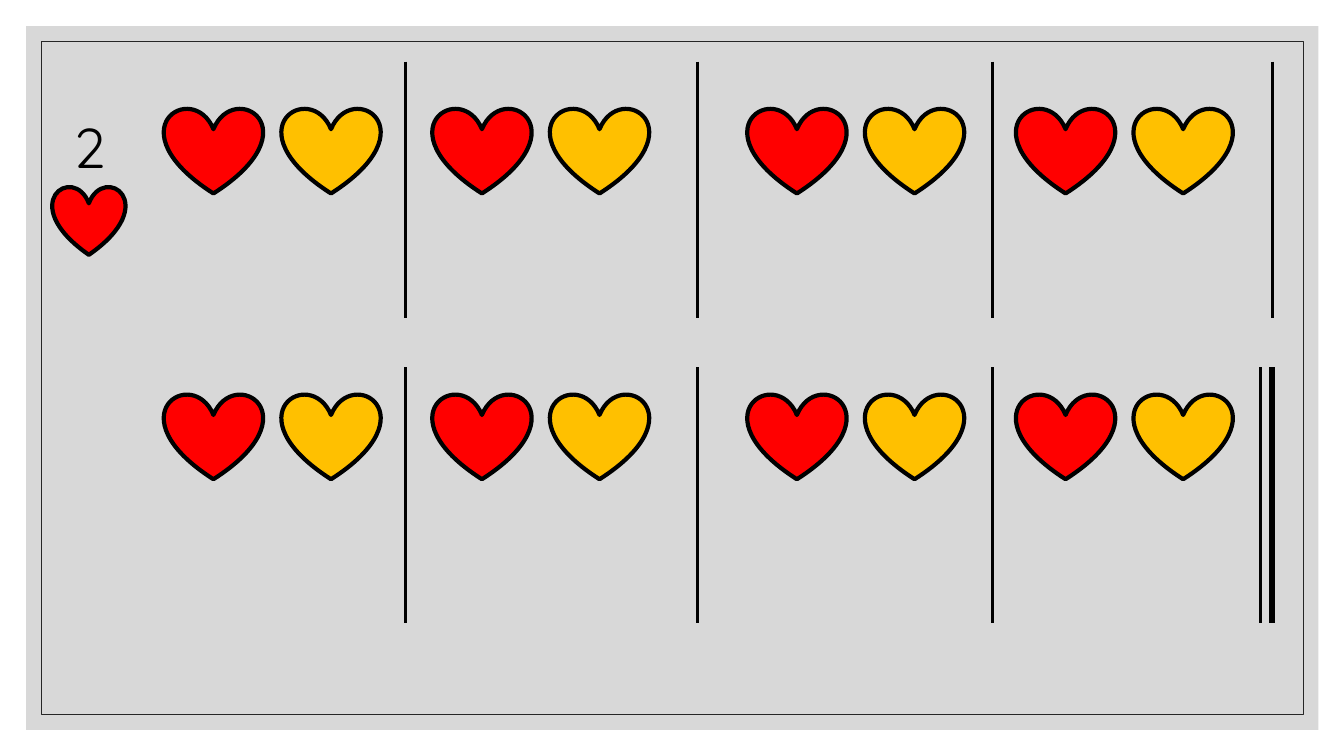
from lxml.etree import SubElement
from pptx import Presentation
from pptx.dml.color import RGBColor
from pptx.enum.shapes import MSO_CONNECTOR, MSO_SHAPE
from pptx.enum.text import PP_ALIGN
from pptx.oxml.ns import qn
from pptx.util import Pt

COLORS = {"panel": "BFBFBF", "frame": "262626", "red": "FF0000",
          "gold": "FFC000", "black": "000000"}
BEATS = "2"
PAIR_LEFTS = [117.2, 309, 534, 725.9]
PAIR_COLORS = ["red", "gold"]
HEART_STEP = 84
HEART_SIZE = (70.5, 61.2)
BAR_HEIGHT = 183
INNER_BARS = [(289.5, 2.25), (498.2, 2.25), (709.2, 2.25)]
ROWS = [
    {"hearts": 77, "bars": 44, "end_bars": [(908.7, 2.25)]},
    {"hearts": 281.1, "bars": 262.2, "end_bars": [(900.6, 2.25), (908.7, 4.5)]},
]


def rgb(name):
    return RGBColor.from_string(COLORS[name])


def add_preset(kind, x, y, w, h, fill=None, line=None, weight=0):
    sp = s.shapes.add_shape(kind, Pt(x), Pt(y), Pt(w), Pt(h))
    sp.shadow.inherit = False
    if fill:
        sp.fill.solid()
        sp.fill.fore_color.rgb = rgb(fill)
    else:
        sp.fill.background()
    if line:
        sp.line.color.rgb = rgb(line)
        sp.line.width = Pt(weight)
    else:
        sp.line.fill.background()
    return sp


def add_heart(x, y, w, h, fill):
    add_preset(MSO_SHAPE.HEART, x, y, w, h, fill, "black", 3)


def add_bar(x, y, weight):
    bar = s.shapes.add_connector(MSO_CONNECTOR.STRAIGHT, Pt(x), Pt(y),
                                 Pt(x), Pt(y + BAR_HEIGHT))
    bar.line.color.rgb = rgb("black")
    bar.line.width = Pt(weight)
    SubElement(bar._element.spPr, qn("a:effectLst"))


prs = Presentation()
prs.slide_width, prs.slide_height = Pt(960), Pt(540)
s = prs.slides.add_slide(prs.slide_layouts[6])

panel = add_preset(MSO_SHAPE.RECTANGLE, 18.7, 18.7, 923, 502.6, "panel")
panel_color = panel._element.spPr.find(qn("a:solidFill"))[0]
SubElement(panel_color, qn("a:alpha"), val="60000")
add_preset(MSO_SHAPE.RECTANGLE, 29.5, 29.5, 901.4, 481, None, "frame", 0.5)

for row in ROWS:
    for left in PAIR_LEFTS:
        for i, color in enumerate(PAIR_COLORS):
            add_heart(left + i * HEART_STEP, row["hearts"], *HEART_SIZE, color)
    for x, weight in INNER_BARS + row["end_bars"]:
        add_bar(x, row["bars"], weight)

box = s.shapes.add_textbox(Pt(34.4), Pt(77), Pt(59), Pt(55.4))
tf = box.text_frame
tf.word_wrap = True
p = tf.paragraphs[0]
p.text = BEATS
p.alignment = PP_ALIGN.CENTER
p.font.name = "Quicksand"
p.font.size = Pt(40)
p.font.color.rgb = rgb("black")
add_heart(37.5, 133, 52, 49, "red")

prs.save("out.pptx")
